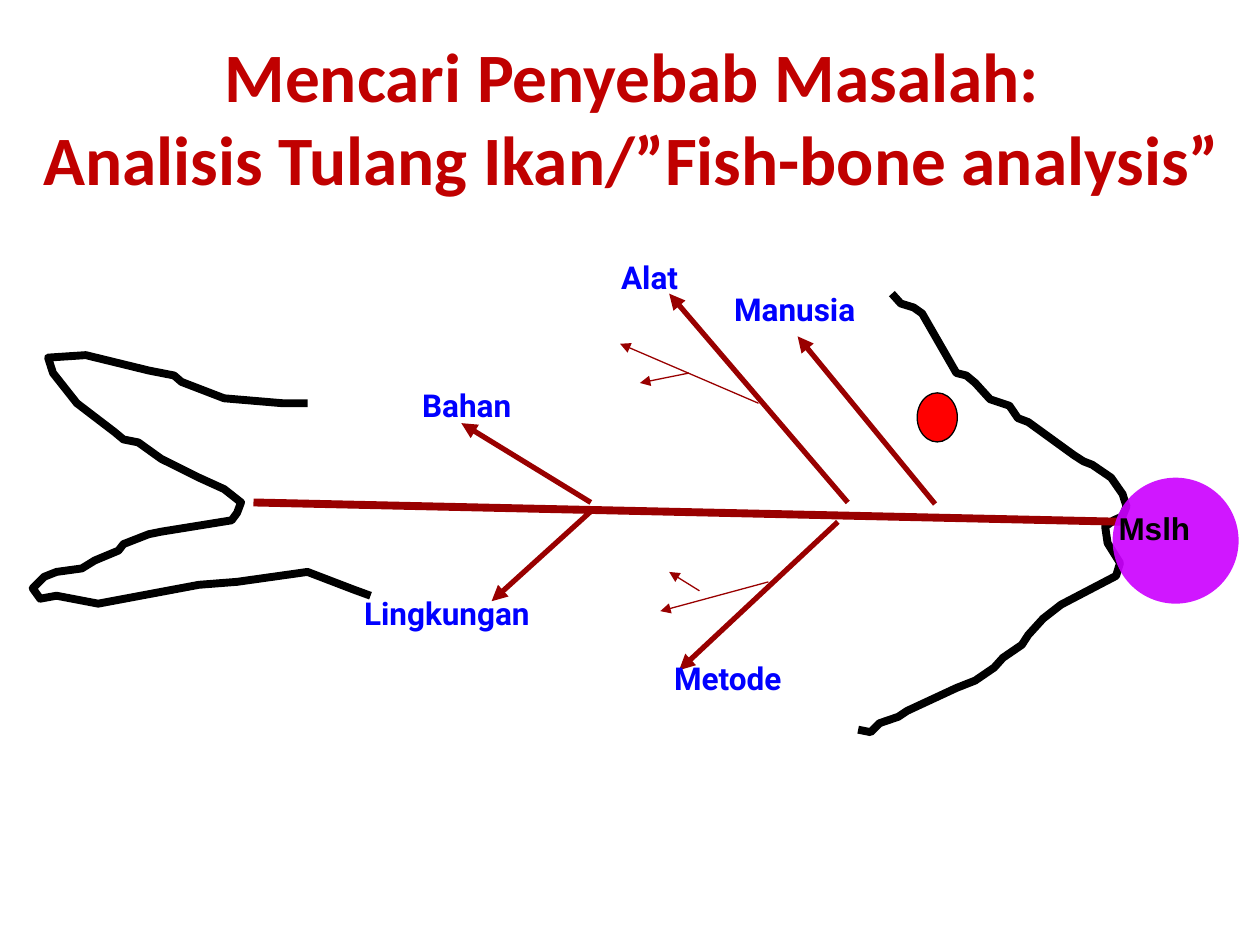
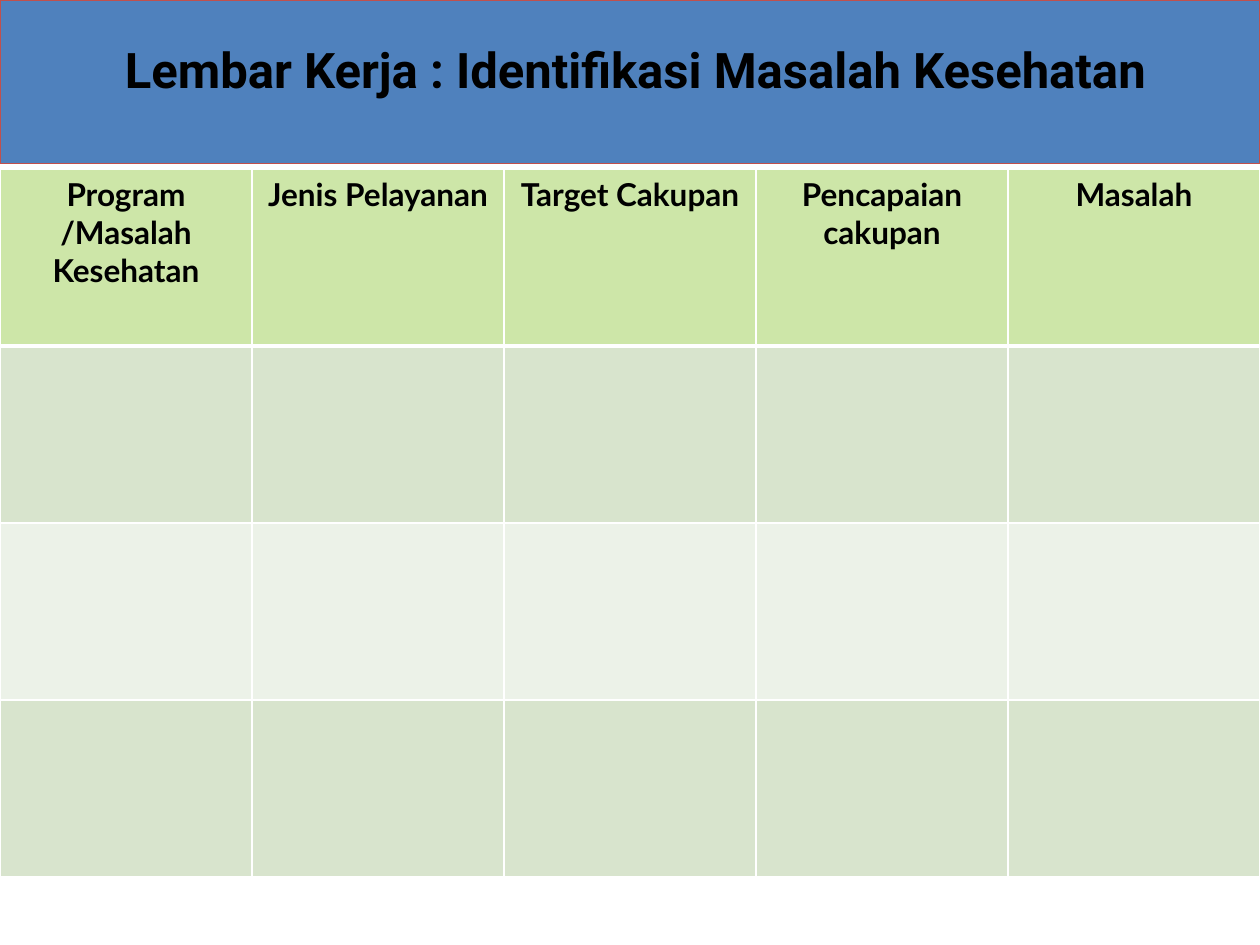
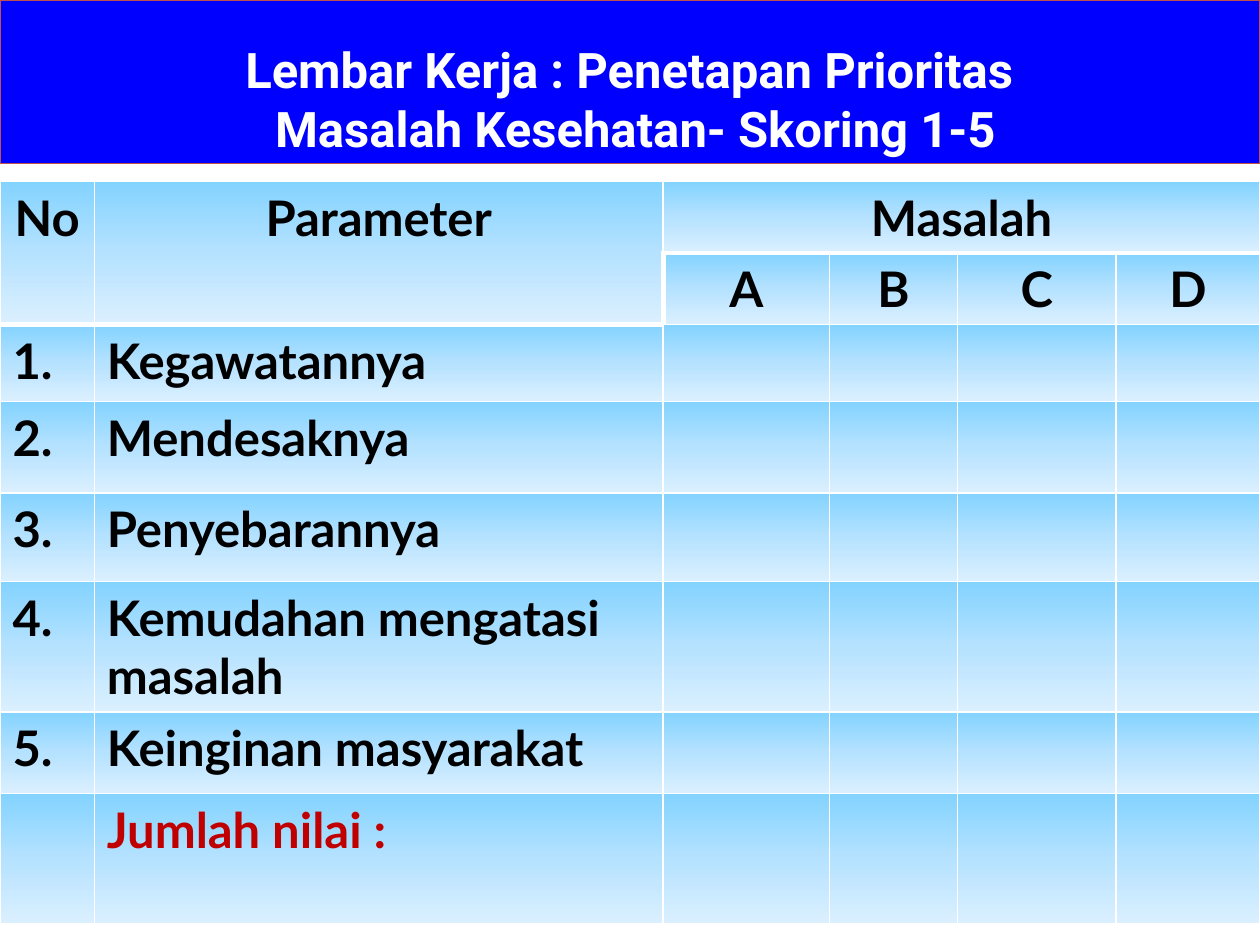
"""Build three slides on finding and ranking health problems."""
import dataclasses

import lxml.etree
import pptx
import pptx.dml.color
import pptx.enum.shapes
import pptx.enum.text
import pptx.oxml.ns
import pptx.util

Cm = pptx.util.Cm
Pt = pptx.util.Pt
qn = pptx.oxml.ns.qn
CENTER = pptx.enum.text.PP_ALIGN.CENTER
LEFT = pptx.enum.text.PP_ALIGN.LEFT


@dataclasses.dataclass(frozen=True)
class Theme:
    """Colours, fonts and type sizes of the deck."""
    black: str = "000000"
    white: str = "FFFFFF"
    crimson: str = "C00000"
    bone: str = "990000"
    eye: str = "FF0000"
    problem: str = "CC00FF"
    blue: str = "0000FF"
    band: str = "4F81BD"
    band_edge: str = "C0504D"
    header: str = "CDE6A8"
    odd_row: str = "D8E4CD"
    even_row: str = "ECF2E8"
    sky: tuple = ((0, "83D3FF"), (50, "B5E2FF"), (100, "DBF0FF"))
    title_font: str = "Calibri"
    label_font: str = "Roboto"
    problem_font: str = "Arial"
    table_font: str = "Lato"
    title_size: float = 39.6
    large: int = 28
    small: int = 18
    outline: float = 4.5
    rib: float = 3
    hairline: float = 0.75
    grid: float = 1
    heavy_grid: float = 3


@dataclasses.dataclass(frozen=True)
class Box:
    """A region of a slide, in centimetres."""
    left: float
    top: float
    width: float
    height: float

    def at(self, x, y):
        """Return the slide position of a point given within the box."""
        return Cm(self.left + x), Cm(self.top + y)

    def inner(self, x, y, width, height):
        """Return a box placed within this one."""
        return Box(self.left + x, self.top + y, width, height)

    def frame(self):
        """Return left, top, width and height as lengths."""
        return [Cm(v) for v in (self.left, self.top, self.width, self.height)]


THEME = Theme()
PAGE = Box(0, 0, 25.4, 19.05)
BAND_HEIGHT = 3.3

TAIL = [
    (5.7, 3.13), (5.19, 3.13), (4.02, 3.03), (3.16, 2.7), (3.01, 2.57),
    (2.5, 2.47), (1.23, 2.16), (0.47, 2.21), (0.57, 2.52), (1.05, 3.13),
    (1.81, 3.71), (1.99, 3.86), (2.29, 3.92), (2.75, 4.25), (3.51, 4.63),
    (4.02, 4.86), (4.36, 5.13), (4.28, 5.34), (4.17, 5.49), (2.75, 5.72),
    (2.5, 5.77), (1.99, 5.97), (1.89, 6.1), (1.41, 6.3), (1.15, 6.46),
    (0.64, 6.53), (0.39, 6.63), (0.16, 6.86), (0.31, 7.07), (0.64, 7.01),
    (1.48, 7.17), (3.51, 6.79), (4.28, 6.73), (5.7, 6.53), (6.64, 6.89),
    (6.97, 7.01),
]
HEAD = [
    (17.48, 0.92), (17.66, 1.12), (17.92, 1.2), (18.09, 1.32), (18.78, 2.52),
    (18.98, 2.57), (19.16, 2.72), (19.46, 3.05), (19.85, 3.18), (20.02, 3.43),
    (20.23, 3.51), (21.14, 4.17), (21.34, 4.3), (21.52, 4.37), (21.9, 4.63),
    (22.13, 4.96), (22.21, 5.21), (22.13, 5.41), (21.95, 5.49), (21.78, 5.62),
    (21.83, 5.95), (22.08, 6.35), (22, 6.61), (20.89, 7.19), (20.53, 7.47),
    (20.23, 7.8), (20.1, 8), (19.72, 8.26), (19.54, 8.46), (19.16, 8.72),
    (18.78, 8.87), (17.79, 9.33), (17.61, 9.45), (17.23, 9.58),
    (17.05, 9.76), (16.8, 9.71),
]
SPINE = ((4.61, 5.13), (22.21, 5.52))
RIBS = [
    ((16.59, 5.13), (12.99, 0.92)), ((16.39, 5.52), (13.19, 8.51)),
    ((11.41, 5.31), (9.41, 7.12)), ((11.41, 5.13), (8.8, 3.53)),
]
TWIGS = [
    ((14.79, 3.13), (12, 1.93)), ((14.99, 6.73), (12.81, 7.32)),
    ((13.39, 2.52), (12.4, 2.72)), ((13.6, 6.91), (12.99, 6.53)),
]
FRONT_RIBS = [((18.35, 5.16), (15.58, 1.78))]
CAUSES = [
    ("Manusia", 14.05, 0.72, 4.11), ("Alat", 11.77, 0.08, 2.97),
    ("Bahan", 7.76, 2.66, 3.76), ("Metode", 12.84, 8.16, 3.81),
    ("Lingkungan", 6.59, 6.86, 5.51),
]


def rgb(code):
    """Return a colour object for a hex code."""
    return pptx.dml.color.RGBColor.from_string(code)


def style(paragraph, font, size, color, align):
    """Set the bold type and alignment of a paragraph."""
    paragraph.alignment = align
    paragraph.font.name = font
    paragraph.font.size = Pt(size)
    paragraph.font.bold = True
    paragraph.font.color.rgb = rgb(color)


def add_text(slide, box, lines, font, size, color, align=LEFT,
             anchor=pptx.enum.text.MSO_ANCHOR.TOP):
    """Add a wrapped text box with one paragraph for each line."""
    frame = slide.shapes.add_textbox(*box.frame()).text_frame
    frame.word_wrap = True
    frame.vertical_anchor = anchor
    frame.text = "\n".join(lines)
    for paragraph in frame.paragraphs:
        style(paragraph, font, size, color, align)


def add_filled(slide, kind, box, fill, edge=None):
    """Add a preset shape with a plain fill and an optional thin edge."""
    shape = slide.shapes.add_shape(kind, *box.frame())
    shape.shadow.inherit = False
    shape.fill.solid()
    shape.fill.fore_color.rgb = rgb(fill)
    if edge:
        shape.line.color.rgb = rgb(edge)
        shape.line.width = Pt(THEME.hairline)
    else:
        shape.line.fill.background()
    return shape


def add_bone(slide, box, ends, weight, arrow=True):
    """Add one straight bone between two points of the box."""
    start, end = ends
    bone = slide.shapes.add_connector(
        pptx.enum.shapes.MSO_CONNECTOR.STRAIGHT, *box.at(*start), *box.at(*end))
    bone.line.color.rgb = rgb(THEME.bone)
    bone.line.width = Pt(weight)
    if arrow:
        lxml.etree.SubElement(bone.line._get_or_add_ln(), qn("a:tailEnd"), type="triangle")
    lxml.etree.SubElement(bone._element.spPr, qn("a:effectLst"))


def add_outline(slide, box, knots):
    """Draw an open outline through the knots."""
    start, *rest = [box.at(*knot) for knot in knots]
    builder = slide.shapes.build_freeform(*start)
    builder.add_line_segments(rest, close=False)
    outline = builder.convert_to_shape()
    outline.shadow.inherit = False
    outline.fill.background()
    outline.line.color.rgb = rgb(THEME.black)
    outline.line.width = Pt(THEME.outline)


def add_fish(slide, box):
    """Draw the fish-bone diagram with its causes and problem."""
    oval = pptx.enum.shapes.MSO_SHAPE.OVAL
    for knots in (TAIL, HEAD):
        add_outline(slide, box, knots)
    add_filled(slide, oval, box.inner(17.99, 2.92, 0.81, 0.99), THEME.eye, THEME.black)
    add_bone(slide, box, SPINE, THEME.outline, arrow=False)
    for bones, weight in ((RIBS, THEME.rib), (TWIGS, THEME.hairline),
                          (FRONT_RIBS, THEME.rib)):
        for ends in bones:
            add_bone(slide, box, ends, weight)
    for cause, x, y, width in CAUSES:
        add_text(slide, box.inner(x, y, width, 1.27), [cause],
                 THEME.label_font, THEME.small, THEME.blue)
    problem = add_filled(slide, oval, box.inner(21.93, 4.63, 2.54, 2.54), THEME.problem)
    tint = problem._element.spPr.find(qn("a:solidFill"))[0]
    lxml.etree.SubElement(tint, qn("a:alpha"), val="91000")
    add_text(slide, box.inner(21.8, 5.13, 2.79, 1.27), ["Mslh"],
             THEME.problem_font, THEME.small, THEME.black)


def add_band(slide, box, lines, fill, color):
    """Add the title band of a worksheet."""
    add_filled(slide, pptx.enum.shapes.MSO_SHAPE.RECTANGLE, box, fill, THEME.band_edge)
    add_text(slide, box.inner(1.35, 0.67, 22.91, 0.26 + 1.19 * len(lines)), lines,
             THEME.label_font, THEME.large, color, CENTER)


def fill_cell(cell, fill):
    """Fill a cell with one colour or with downward gradient stops."""
    if isinstance(fill, str):
        cell.fill.solid()
        cell.fill.fore_color.rgb = rgb(fill)
        return
    gradient = lxml.etree.SubElement(cell._tc.get_or_add_tcPr(), qn("a:gradFill"))
    stops = lxml.etree.SubElement(gradient, qn("a:gsLst"))
    for percent, color in fill:
        stop = lxml.etree.SubElement(stops, qn("a:gs"), pos=str(percent * 1000))
        lxml.etree.SubElement(stop, qn("a:srgbClr"), val=color)
    lxml.etree.SubElement(gradient, qn("a:lin"), ang="5400000", scaled="0")


def rule_cell(cell, heavy):
    """Draw the white borders of a cell, with the heavy sides thicker."""
    properties = cell._tc.get_or_add_tcPr()
    for place, side in enumerate("LRTB"):
        weight = THEME.heavy_grid if side in heavy else THEME.grid
        border = lxml.etree.Element(qn(f"a:ln{side}"), w=str(Pt(weight)))
        paint = lxml.etree.SubElement(border, qn("a:solidFill"))
        lxml.etree.SubElement(paint, qn("a:srgbClr"), val=THEME.white)
        properties.insert(place, border)


def add_grid(slide, box, widths, heights, texts, fills, heavy, size, header_rows):
    """Add a worksheet table, with centred header rows, and return it."""
    table = slide.shapes.add_table(len(heights), len(widths), *box.frame()).table
    table.first_row = table.horz_banding = False
    for column, width in zip(table.columns, widths):
        column.width = Cm(width)
    for r, (row, height, fill) in enumerate(zip(table.rows, heights, fills)):
        row.height = Cm(height)
        for c, cell in enumerate(row.cells):
            cell.text = texts.get((r, c), "")
            style(cell.text_frame.paragraphs[0], THEME.table_font, size, THEME.black,
                  CENTER if r < header_rows else LEFT)
            fill_cell(cell, fill)
            rule_cell(cell, heavy.get((r, c), ""))
    return table


def add_identification(slide, box):
    """Add the empty table for identifying health problems."""
    headings = ["Program /Masalah Kesehatan", "Jenis Pelayanan", "Target Cakupan",
                "Pencapaian cakupan", "Masalah"]
    count = len(headings)
    fills = [THEME.header, THEME.odd_row, THEME.even_row, THEME.odd_row]
    heavy = {(r, c): side for r, side in enumerate("BT") for c in range(count)}
    add_grid(slide, box, [box.width / count] * count, [box.height / len(fills)] * len(fills),
             {(0, c): heading for c, heading in enumerate(headings)},
             fills, heavy, THEME.small, 1)


def add_scoring(slide, box):
    """Add the table for scoring problems A to D."""
    parameters = ["Kegawatannya", "Mendesaknya", "Penyebarannya",
                  "Kemudahan mengatasi masalah", "Keinginan masyarakat"]
    widths = [1.9, 11.47, 3.35, 2.58, 3.2, 2.9]
    heights = [1.42, 1.42, 1.55, 1.85, 1.78, 2.62, 1.65, 2.63]
    texts = {(0, 0): "No", (0, 1): "Parameter", (0, 2): "Masalah", (7, 1): "Jumlah nilai :"}
    texts.update({(1, c): letter for c, letter in enumerate("ABCD", 2)})
    for number, parameter in enumerate(parameters, 1):
        texts[number + 1, 0] = f"{number}."
        texts[number + 1, 1] = parameter
    heavy = {(0, c): "B" for c in range(6)}
    heavy.update({(1, c): "B" if c < 2 else "T" for c in range(6)})
    heavy.update({(1, 2): "LT", (2, 0): "T", (2, 1): "T"})
    table = add_grid(slide, box, widths, heights, texts, [THEME.sky] * len(heights),
                     heavy, THEME.large, 2)
    for first, last in (((0, 0), (1, 0)), ((0, 1), (1, 1)), ((0, 2), (0, 5))):
        table.cell(*first).merge(table.cell(*last))
    total = table.cell(7, 1).text_frame.paragraphs[0]
    total.font.color.rgb = rgb(THEME.crimson)


def fishbone_slide(slide, box):
    """Lay out the title and the fish-bone diagram."""
    add_text(slide, box.inner(0.5, 0.76, 24.48, 3.18),
             ["Mencari Penyebab Masalah:\vAnalisis Tulang Ikan/”Fish-bone analysis” "],
             THEME.title_font, THEME.title_size, THEME.crimson, CENTER,
             pptx.enum.text.MSO_ANCHOR.MIDDLE)
    add_fish(slide, box.inner(0.5, 5, 24.5, 9.9))


def identification_slide(slide, box):
    """Lay out the worksheet for identifying problems."""
    add_identification(slide, box.inner(0, 3.41, box.width, 14.27))
    add_band(slide, box.inner(0, 0, box.width, BAND_HEIGHT),
             ["Lembar Kerja : Identifikasi Masalah Kesehatan"], THEME.band, THEME.black)


def scoring_slide(slide, box):
    """Lay out the worksheet for ranking problems."""
    add_scoring(slide, box.inner(0, 3.66, box.width, 14.92))
    add_band(slide, box.inner(0, 0, box.width, BAND_HEIGHT),
             ["Lembar Kerja : Penetapan Prioritas ", "Masalah Kesehatan- Skoring 1-5"],
             THEME.blue, THEME.white)


def main():
    """Build and save the deck."""
    deck = pptx.Presentation()
    deck.slide_width, deck.slide_height = Cm(PAGE.width), Cm(PAGE.height)
    for build in (fishbone_slide, identification_slide, scoring_slide):
        build(deck.slides.add_slide(deck.slide_layouts[6]), PAGE)
    deck.save("out.pptx")


if __name__ == "__main__":
    main()
